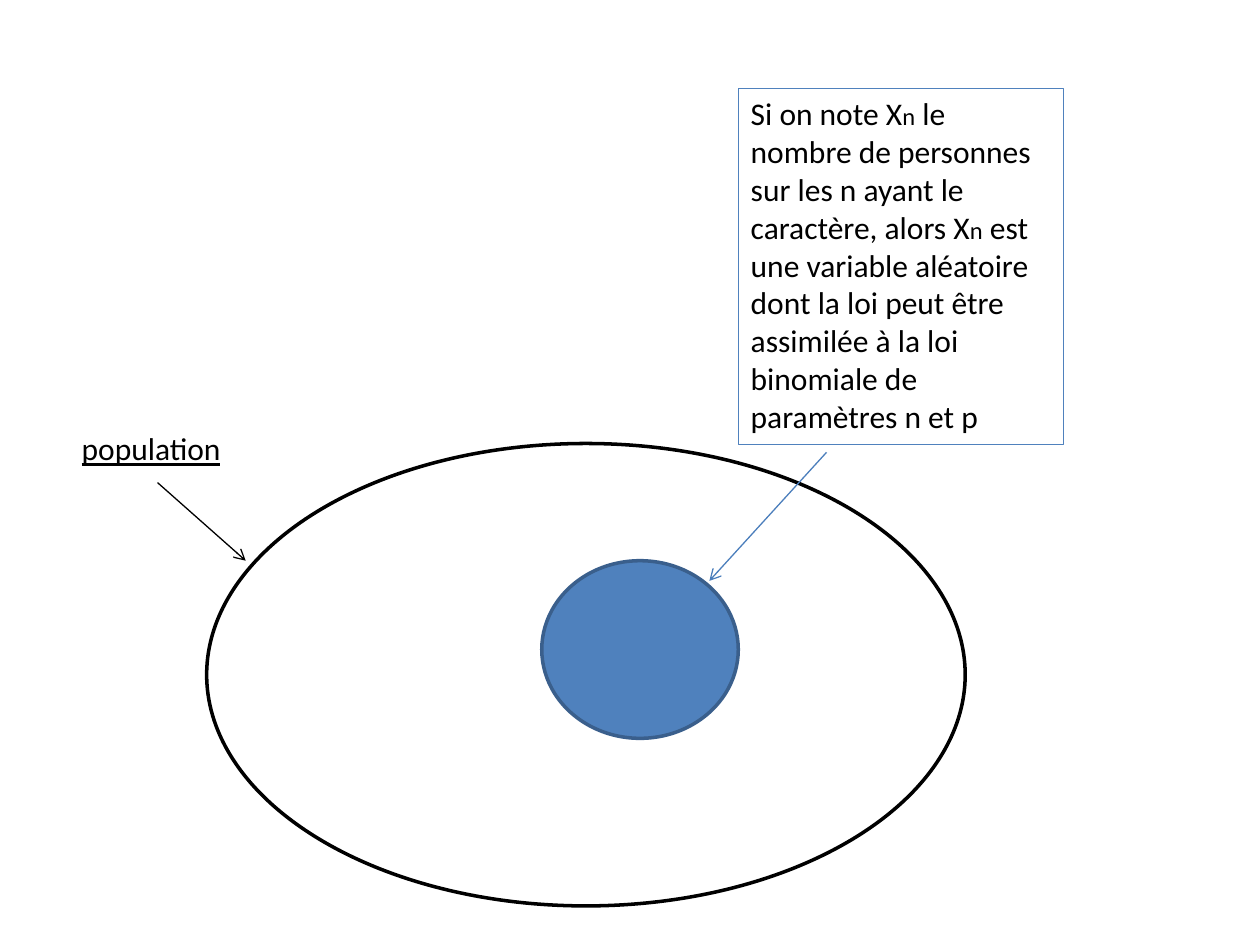
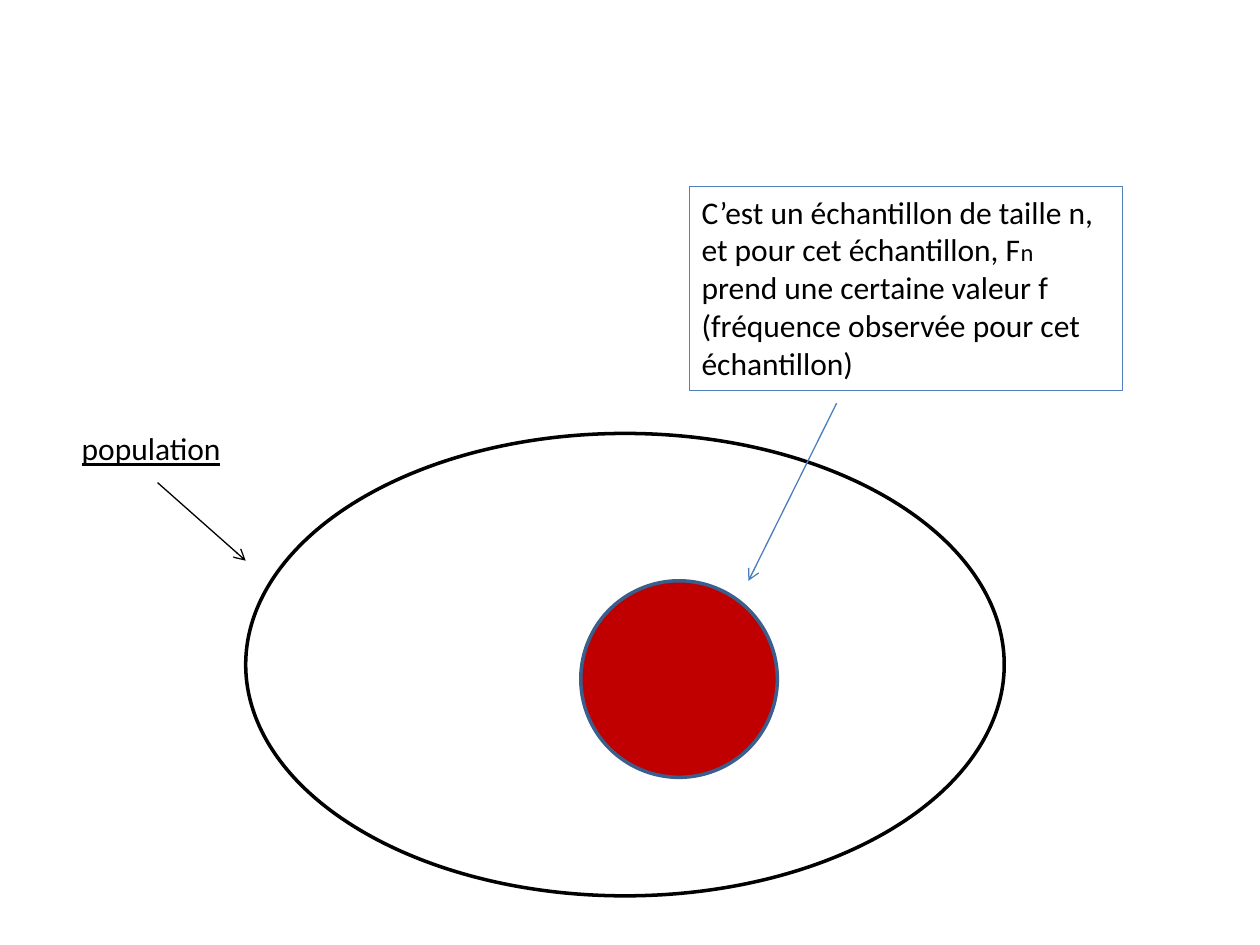
from dataclasses import dataclass

from lxml import etree
from pptx import Presentation
from pptx import util as u
from pptx.dml.color import RGBColor
from pptx.enum import shapes, text
from pptx.oxml import ns

FONT = "Calibri"
COLOURS = {
    "ink": "000000",
    "paper": "FFFFFF",
    "blue": "4F81BD",
    "rim": "3A5F8C",
    "arrow": "4B7EBC",
    "red": "C00000",
}
BODY_SIZE, INDEX_SIZE = 18, 14


@dataclass(frozen=True)
class Area:
    left: float
    top: float
    width: float
    height: float

    def lengths(self) -> tuple:
        return tuple(u.Inches(n) for n in (self.left, self.top, self.width, self.height))


@dataclass(frozen=True)
class Arrow:
    start: tuple[float, float]
    end: tuple[float, float]
    colour: str


@dataclass(frozen=True)
class SampleSlide:
    population: Area
    sample: Area
    sample_fill: str
    pointer: Arrow
    note: Area
    note_parts: tuple[str, ...]  # ordinary text and small indices alternate


POPULATION_LABEL = Area(0.55, 3.36, 1.56, 0.4)
POPULATION_ARROW = Arrow((1.25, 3.83), (1.95, 4.45), "ink")

SLIDES = [
    SampleSlide(
        population=Area(1.64, 3.52, 6.02, 3.67),
        sample=Area(4.3, 4.45, 1.56, 1.41),
        sample_fill="blue",
        pointer=Arrow((6.56, 3.59), (5.63, 4.61), "arrow"),
        note=Area(5.86, 0.7, 2.58, 2.83),
        note_parts=(
            "Si on note X", "n",
            " le nombre de personnes sur les n ayant le caractère, alors X", "n",
            " est une variable aléatoire dont la loi peut être assimilée à la loi "
            "binomiale de paramètres n et p",
        ),
    ),
    SampleSlide(
        population=Area(1.95, 3.44, 6.02, 3.67),
        sample=Area(4.61, 4.61, 1.56, 1.56),
        sample_fill="red",
        pointer=Arrow((6.64, 3.2), (5.94, 4.61), "arrow"),
        note=Area(5.47, 1.48, 3.44, 1.62),
        note_parts=(
            "C’est un échantillon de taille n, et pour cet échantillon, F", "n",
            " prend une certaine valeur f (fréquence observée pour cet échantillon)",
        ),
    ),
]


def colour(name: str) -> RGBColor:
    return RGBColor.from_string(COLOURS[name])


def set_line(line, name: str, width: float) -> None:
    line.color.rgb = colour(name)
    line.width = u.Pt(width)


def add_ellipse(page, area: Area, fill: str, rim: str) -> None:
    ellipse = page.shapes.add_shape(shapes.MSO_SHAPE.OVAL, *area.lengths())
    ellipse.shadow.inherit = False
    ellipse.fill.solid()
    ellipse.fill.fore_color.rgb = colour(fill)
    set_line(ellipse.line, rim, 2)


def add_arrow(page, arrow: Arrow) -> None:
    ends = [u.Inches(n) for n in arrow.start + arrow.end]
    connector = page.shapes.add_connector(shapes.MSO_CONNECTOR.STRAIGHT, *ends)
    set_line(connector.line, arrow.colour, 0.75)
    properties = connector._element.spPr
    outline = properties.find(ns.qn("a:ln"))
    etree.SubElement(outline, ns.qn("a:tailEnd"), type="arrow")
    etree.SubElement(properties, ns.qn("a:effectLst"))


def add_text(page, parts: tuple[str, ...], *, area: Area, underline: bool = False,
             border: str | None = None) -> None:
    box = page.shapes.add_textbox(*area.lengths())
    if border:
        set_line(box.line, border, 0.75)
    frame = box.text_frame
    frame.word_wrap = True
    frame.auto_size = text.MSO_AUTO_SIZE.SHAPE_TO_FIT_TEXT
    para = frame.paragraphs[0]
    for index, part in enumerate(parts):
        span = para.add_run()
        span.text = part
        span.font.name = FONT
        span.font.size = u.Pt(INDEX_SIZE if index % 2 else BODY_SIZE)
        span.font.color.rgb = colour("ink")
        if underline:
            span.font.underline = True


def add_sample_slide(deck, content: SampleSlide) -> None:
    page = deck.slides.add_slide(deck.slide_layouts[6])
    # Population with its label
    add_ellipse(page, content.population, "paper", "ink")
    add_arrow(page, POPULATION_ARROW)
    add_text(page, ("population",), area=POPULATION_LABEL, underline=True)
    # Sample with its explanation
    add_ellipse(page, content.sample, content.sample_fill, "rim")
    add_arrow(page, content.pointer)
    add_text(page, content.note_parts, area=content.note, border="blue")


def main() -> None:
    deck = Presentation()
    deck.slide_width, deck.slide_height = u.Inches(10), u.Inches(7.5)
    for content in SLIDES:
        add_sample_slide(deck, content)
    deck.save("out.pptx")


if __name__ == "__main__":
    main()
